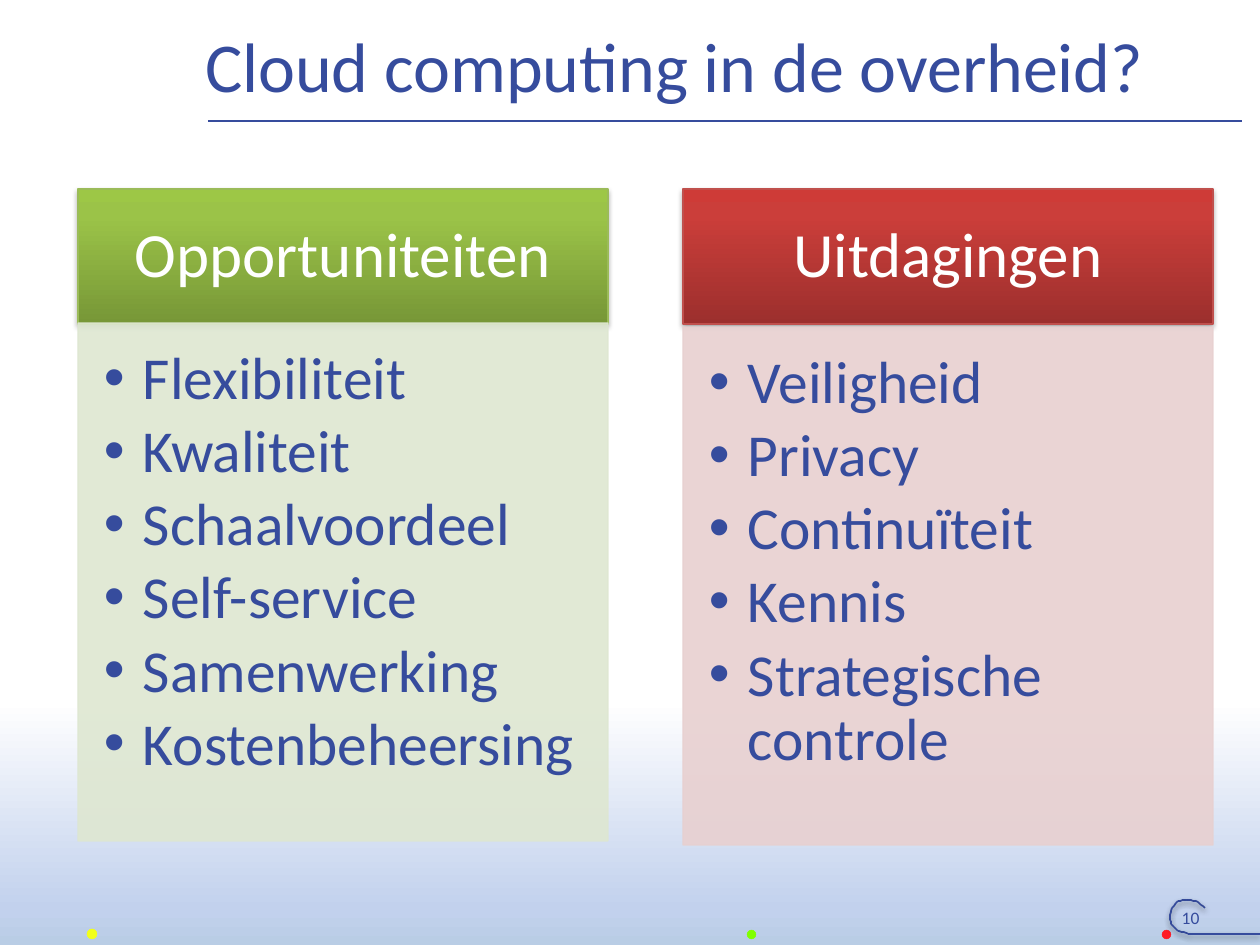
import itertools
from dataclasses import dataclass

import lxml.etree
import pptx
import pptx.dml.color
import pptx.enum.shapes
import pptx.enum.text
import pptx.oxml.ns
import pptx.util

RGB = pptx.dml.color.RGBColor
ALIGN = pptx.enum.text.PP_ALIGN
ANCHOR = pptx.enum.text.MSO_ANCHOR
SHAPE = pptx.enum.shapes.MSO_SHAPE

PX_PER_INCH = 126
FONT = "Calibri"
INK = RGB(0x36, 0x4C, 0x9D)
WHITE = RGB(0xFF, 0xFF, 0xFF)
SKY = RGB(0xB9, 0xCD, 0xE5)
PALE_SKY = RGB(0xC2, 0xD1, 0xED)
RED_DARK, RED_MID, RED_LIGHT = RGB(0x9C, 0x2F, 0x2D), RGB(0xCB, 0x3E, 0x3A), RGB(0xCE, 0x3B, 0x37)
RED_EDGE, RED_PANEL = RGB(0xC0, 0x50, 0x4D), RGB(0xE8, 0xD0, 0xD0)
GREEN_DARK, GREEN_MID, GREEN_LIGHT = RGB(0x77, 0x97, 0x37), RGB(0x9B, 0xC3, 0x48), RGB(0x9D, 0xC7, 0x46)
GREEN_EDGE, GREEN_PANEL = RGB(0x9B, 0xBB, 0x59), RGB(0xDE, 0xE7, 0xD1)
DOT_RED, DOT_GREEN, DOT_YELLOW = RGB(0xFF, 0x1A, 0x26), RGB(0x80, 0xFF, 0x00), RGB(0xF2, 0xFF, 0x1A)

Stops = list[tuple[int, RGB]]


@dataclass
class Column:
    heading: str
    items: list[str]
    left: int
    list_top: int
    stops: Stops
    edge: RGB
    panel: RGB
    heading_idx: int
    list_idx: int


@dataclass
class Dot:
    left: int
    top: int
    size: int
    color: RGB


COLUMNS = [
    Column("Uitdagingen",
           ["Veiligheid", "Privacy", "Continuïteit", "Kennis", "Strategische controle"],
           683, 327, [(0, RED_DARK), (80, RED_MID), (100, RED_LIGHT)],
           RED_EDGE, RED_PANEL, 3, 4),
    Column("Opportuniteiten",
           ["Flexibiliteit", "Kwaliteit", "Schaalvoordeel", "Self-service",
            "Samenwerking", "Kostenbeheersing"],
           78, 323, [(0, GREEN_DARK), (80, GREEN_MID), (100, GREEN_LIGHT)],
           GREEN_EDGE, GREEN_PANEL, 1, 2),
]
DOTS = [Dot(1162, 930, 9, DOT_RED), Dot(747, 930, 9, DOT_GREEN), Dot(87, 929, 10, DOT_YELLOW)]
# Corners of the loop around the page number, counter-clockwise, then out to the right edge.
LOOP = [
    (1205, 908), (1203, 906), (1201, 905), (1198, 902), (1196, 901), (1193, 901), (1191, 900),
    (1189, 900), (1187, 900), (1184, 900), (1182, 900), (1181, 901), (1178, 901), (1177, 902),
    (1176, 903), (1174, 906), (1173, 907), (1172, 908), (1171, 911), (1171, 912), (1170, 915),
    (1170, 917), (1170, 920), (1171, 921), (1171, 924), (1172, 925), (1173, 926), (1174, 927),
    (1176, 929), (1177, 930), (1178, 931), (1179, 931), (1181, 932), (1182, 932), (1183, 932),
    (1184, 932), (1186, 933), (1187, 933), (1188, 934), (1260, 934),
]


def px(length: int) -> pptx.util.Emu:
    return pptx.util.Emu(round(length * 914400 / PX_PER_INCH))


def add_xml(parent, tag: str, **attributes):
    return lxml.etree.SubElement(
        parent, pptx.oxml.ns.qn(tag), {key: str(value) for key, value in attributes.items()})


def place(shape, left: int, top: int, width: int, height: int) -> None:
    shape.left, shape.top, shape.width, shape.height = map(px, (left, top, width, height))


def fill_gradient(shape, stops: Stops) -> None:
    """Fill from bottom to top with colour stops given in percent."""
    shape.fill.gradient()
    shape.fill.gradient_angle = 90
    stop_list = shape.element.spPr.find(".//" + pptx.oxml.ns.qn("a:gsLst"))
    for default_stop in list(stop_list):
        stop_list.remove(default_stop)
    for percent, color in stops:
        add_xml(add_xml(stop_list, "a:gs", pos=percent * 1000), "a:srgbClr", val=color)


def set_line(shape, color: RGB, points: float) -> None:
    shape.line.color.rgb = color
    shape.line.width = pptx.util.Pt(points)


def set_opacity(shape, percent: int) -> None:
    """Apply one opacity to the fill and the line."""
    for color in list(shape.element.spPr.iter(pptx.oxml.ns.qn("a:srgbClr"))):
        add_xml(color, "a:alpha", val=percent * 1000)


def add_shadow(shape, opacity: int) -> None:
    """Add a soft shadow below; call it after the fill and line are set."""
    effects = add_xml(shape.element.spPr, "a:effectLst")
    shadow = add_xml(effects, "a:outerShdw", blurRad=pptx.util.Pt(3.1), dist=pptx.util.Pt(1.7),
                     dir=90 * 60000, rotWithShape=0)
    add_xml(add_xml(shadow, "a:srgbClr", val="000000"), "a:alpha", val=opacity * 1000)


def add_line(shapes, start: tuple[int, int], end: tuple[int, int], points: float):
    line = shapes.add_connector(
        pptx.enum.shapes.MSO_CONNECTOR.STRAIGHT, *map(px, (*start, *end)))
    set_line(line, INK, points)
    return line


def set_frame(shape, anchor, insets: tuple[int, int, int, int]):
    frame = shape.text_frame
    frame.word_wrap = True
    frame.auto_size = pptx.enum.text.MSO_AUTO_SIZE.NONE
    frame.vertical_anchor = anchor
    frame.margin_left, frame.margin_top, frame.margin_right, frame.margin_bottom = map(px, insets)
    return frame


def write(paragraph, text: str, size: int, color: RGB, align) -> None:
    paragraph.text = text
    paragraph.alignment = align
    paragraph.space_before = pptx.util.Pt(0)
    font = paragraph.font
    font.name, font.size, font.bold = FONT, pptx.util.Pt(size), False
    font.color.rgb = color


def draw_column(slide, column: Column) -> None:
    heading = slide.placeholders[column.heading_idx]
    place(heading, column.left, 189, 530, 135)
    fill_gradient(heading, column.stops)
    set_line(heading, column.edge, 0.75)
    add_shadow(heading, 35)
    frame = set_frame(heading, ANCHOR.MIDDLE, (35, 22, 35, 20))
    write(frame.paragraphs[0], column.heading, 36, WHITE, ALIGN.CENTER)
    frame.paragraphs[0].line_spacing = 0.9

    panel = slide.placeholders[column.list_idx]
    place(panel, column.left, column.list_top, 530, 518)
    panel.fill.solid()
    panel.fill.fore_color.rgb = column.panel
    set_line(panel, column.panel, 0.75)
    set_opacity(panel, 90)
    frame = set_frame(panel, ANCHOR.TOP, (26, 25, 33, 38))
    for number, item in enumerate(column.items):
        paragraph = frame.add_paragraph() if number else frame.paragraphs[0]
        properties = paragraph._p.get_or_add_pPr()
        properties.set("marL", str(px(39)))
        properties.set("indent", str(px(-39)))
        write(paragraph, item, 34, INK, ALIGN.LEFT)
        paragraph.line_spacing = 0.9
        paragraph.space_after = pptx.util.Pt(5.1)


def draw_dot(slide, dot: Dot) -> None:
    oval = slide.shapes.add_shape(SHAPE.OVAL, *map(px, (dot.left, dot.top, dot.size, dot.size)))
    oval.shadow.inherit = False
    oval.fill.solid()
    oval.fill.fore_color.rgb = dot.color
    set_line(oval, dot.color, 0.25)


def draw_horizon(slide) -> None:
    horizon = slide.shapes.add_shape(SHAPE.RECTANGLE, *map(px, (0, 701, 1260, 244)))
    horizon.shadow.inherit = False
    horizon.line.fill.background()
    fill_gradient(horizon, [(0, SKY), (15, PALE_SKY), (100, WHITE)])
    horizon.element.getparent().insert(2, horizon.element)  # behind the placeholders


def draw_page_number(slide, number: str) -> None:
    """Write the number inside an open loop that runs off to the right edge."""
    loop = slide.shapes.add_group_shape()
    for start, end in itertools.pairwise(LOOP):
        add_shadow(add_line(loop.shapes, start, end, 1), 38)
    label = slide.shapes.add_textbox(*map(px, (1153, 901, 67, 30)))
    frame = set_frame(label, ANCHOR.TOP, (13, 6, 5, 0))
    write(frame.paragraphs[0], number, 10, INK, ALIGN.CENTER)


def draw_title(slide, text: str) -> None:
    title = slide.shapes.title
    place(title, 205, 19, 1038, 91)
    frame = set_frame(title, ANCHOR.MIDDLE, (0, 6, 13, 6))
    write(frame.paragraphs[0], text, 40, INK, ALIGN.LEFT)
    rule = add_line(slide.shapes, (208, 121), (1242, 121), 1.5)
    add_xml(rule.element.spPr, "a:effectLst")


def main() -> None:
    presentation = pptx.Presentation()
    presentation.slide_width, presentation.slide_height = px(1260), px(945)
    slide = presentation.slides.add_slide(presentation.slide_layouts.get_by_name("Comparison"))
    draw_horizon(slide)
    draw_title(slide, "Cloud computing in de overheid?")
    for column in COLUMNS:
        draw_column(slide, column)
    for dot in DOTS:
        draw_dot(slide, dot)
    draw_page_number(slide, "10")
    presentation.save("out.pptx")


if __name__ == "__main__":
    main()
